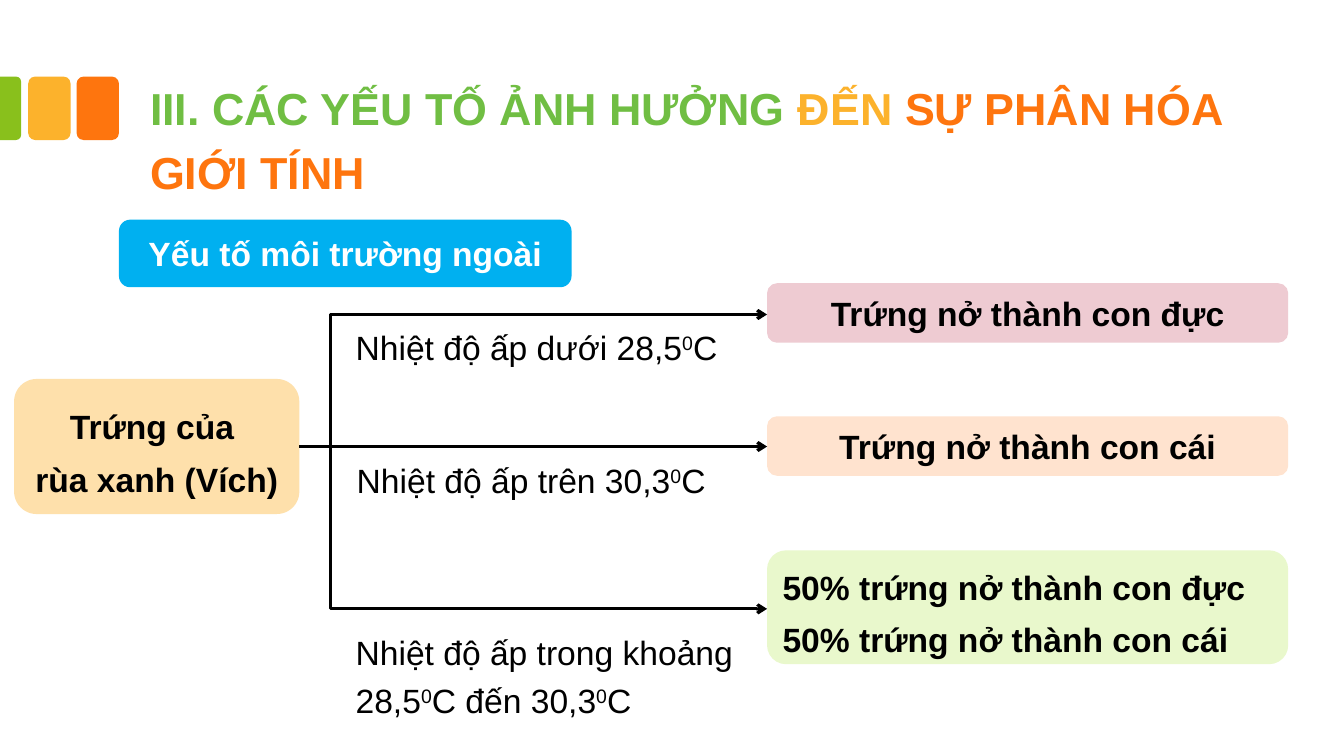
from lxml.etree import SubElement
from pptx import Presentation
from pptx.dml.color import RGBColor
from pptx.enum.shapes import MSO_CONNECTOR as Connector, MSO_SHAPE as Preset
from pptx.enum.text import MSO_ANCHOR as Anchor, MSO_AUTO_SIZE as AutoSize, PP_ALIGN as Align
from pptx.oxml.ns import qn
from pptx.util import Inches, Pt

CELL = Inches(0.1)
COLUMNS, ROWS = 133.33, 75
GREEN, YELLOW, ORANGE = "70BE43", "FCB22C", "FE750E"
BLACK, WHITE = "000000", "FFFFFF"
OUTCOME_LEFT, OUTCOME_WIDTH = 76.1, 51.7
EGGS_RIGHT, BRANCH_LEFT, MIDDLE_ROW = 29.7, 32.8, 44.3


def cells(*counts):
    return [round(count * CELL) for count in counts]


def colour(value):
    return RGBColor.from_string(value)


def write(frame, paragraphs, size=24, bold=False, align=Align.LEFT, spacing=1.0):
    frame.word_wrap = True
    for index, segments in enumerate(paragraphs):
        paragraph = frame.add_paragraph() if index else frame.paragraphs[0]
        paragraph.alignment = align
        paragraph.line_spacing = spacing
        paragraph.font.name = "Arial"
        paragraph.font.size = Pt(size)
        paragraph.font.bold = bold
        for text, shade in segments:
            for part_index, part in enumerate(text.split("^")):
                run = paragraph.add_run()
                run.text = part
                run.font.color.rgb = colour(shade)
                if part_index % 2:
                    run._r.get_or_add_rPr().set("baseline", "30000")


def add_box(slide, left, top, width, height, fill, lines=(), shade=BLACK,
            align=Align.CENTER, spacing=1.0):
    shape = slide.shapes.add_shape(Preset.ROUNDED_RECTANGLE, *cells(left, top, width, height))
    shape.shadow.inherit = False
    shape.fill.solid()
    shape.fill.fore_color.rgb = colour(fill)
    shape.line.fill.background()
    if lines:
        shape.text_frame.vertical_anchor = Anchor.MIDDLE
        write(shape.text_frame, [[(line, shade)] for line in lines],
              bold=True, align=align, spacing=spacing)


def add_label(slide, left, top, width, height, segments, **style):
    frame = slide.shapes.add_textbox(*cells(left, top, width, height)).text_frame
    write(frame, [segments], **style)
    frame.auto_size = AutoSize.SHAPE_TO_FIT_TEXT


def style_arrow(line, *ends):
    line.color.rgb = colour(BLACK)
    line.width = Pt(2.25)
    for end in ends:
        SubElement(line._get_or_add_ln(), qn(f"a:{end}"), type="arrow")


def add_arrow(slide, start, end, row):
    arrow = slide.shapes.add_connector(Connector.STRAIGHT, *cells(start, row, end, row))
    style_arrow(arrow.line, "tailEnd")
    SubElement(arrow._element.spPr, qn("a:effectLst"))


def add_bracket(slide, left, top, width, height):
    bracket = slide.shapes.add_shape(Preset.LEFT_BRACKET, *cells(left, top, width, height))
    bracket.adjustments[0] = 0
    bracket.fill.background()
    style_arrow(bracket.line, "headEnd", "tailEnd")
    bracket.shadow.inherit = False


def main():
    presentation = Presentation()
    presentation.slide_width, presentation.slide_height = cells(COLUMNS, ROWS)
    slide = presentation.slides.add_slide(presentation.slide_layouts[6])

    for left, width, fill in ((-1, 3.1, "89C01C"), (2.8, 4.2, YELLOW), (7.6, 4.2, ORANGE)):
        add_box(slide, left, 7.6, width, 6.3, fill)

    add_label(slide, 13.9, 6.4, 112.6, 13.3, [
        ("III. CÁC YẾU TỐ ẢNH HƯỞNG ", GREEN),
        ("ĐẾN ", YELLOW),
        ("SỰ PHÂN HÓA GIỚI TÍNH", ORANGE),
    ], size=32, bold=True, spacing=1.2)

    add_box(slide, 11.8, 21.8, 44.9, 6.7, "00B0F0", ["Yếu tố môi trường ngoài"], WHITE)
    add_box(slide, 1.4, 37.6, 28.3, 13.4, "FEE0AB",
            ["Trứng của ", "rùa xanh (Vích)"], spacing=1.3)

    outcomes = (
        (28.1, 5.9, "EECBD2", ["Trứng nở thành con đực"], Align.CENTER, 1.0),
        (41.3, 5.9, "FFE3CF", ["Trứng nở thành con cái"], Align.CENTER, 1.0),
        (54.6, 11.3, "E9F8CC", ["50% trứng nở thành con đực", "50% trứng nở thành con cái"],
         Align.JUSTIFY, 1.3),
    )
    for top, height, fill, lines, align, spacing in outcomes:
        add_box(slide, OUTCOME_LEFT, top, OUTCOME_WIDTH, height, fill, lines,
                align=align, spacing=spacing)

    add_arrow(slide, EGGS_RIGHT, OUTCOME_LEFT, MIDDLE_ROW)
    add_bracket(slide, BRANCH_LEFT, 31.2, OUTCOME_LEFT - BRANCH_LEFT, 29.2)

    conditions = (
        (34.3, 31.9, 5, "Nhiệt độ ấp dưới 28,5^0^C", 1.0),
        (34.4, 45.1, 5, "Nhiệt độ ấp trên 30,3^0^C", 1.0),
        (34.3, 61.4, 10.3, "Nhiệt độ ấp trong khoảng 28,5^0^C đến 30,3^0^C", 1.2),
    )
    for left, top, height, text, spacing in conditions:
        add_label(slide, left, top, 41.7, height, [(text, BLACK)], spacing=spacing)

    presentation.save("out.pptx")


if __name__ == "__main__":
    main()
